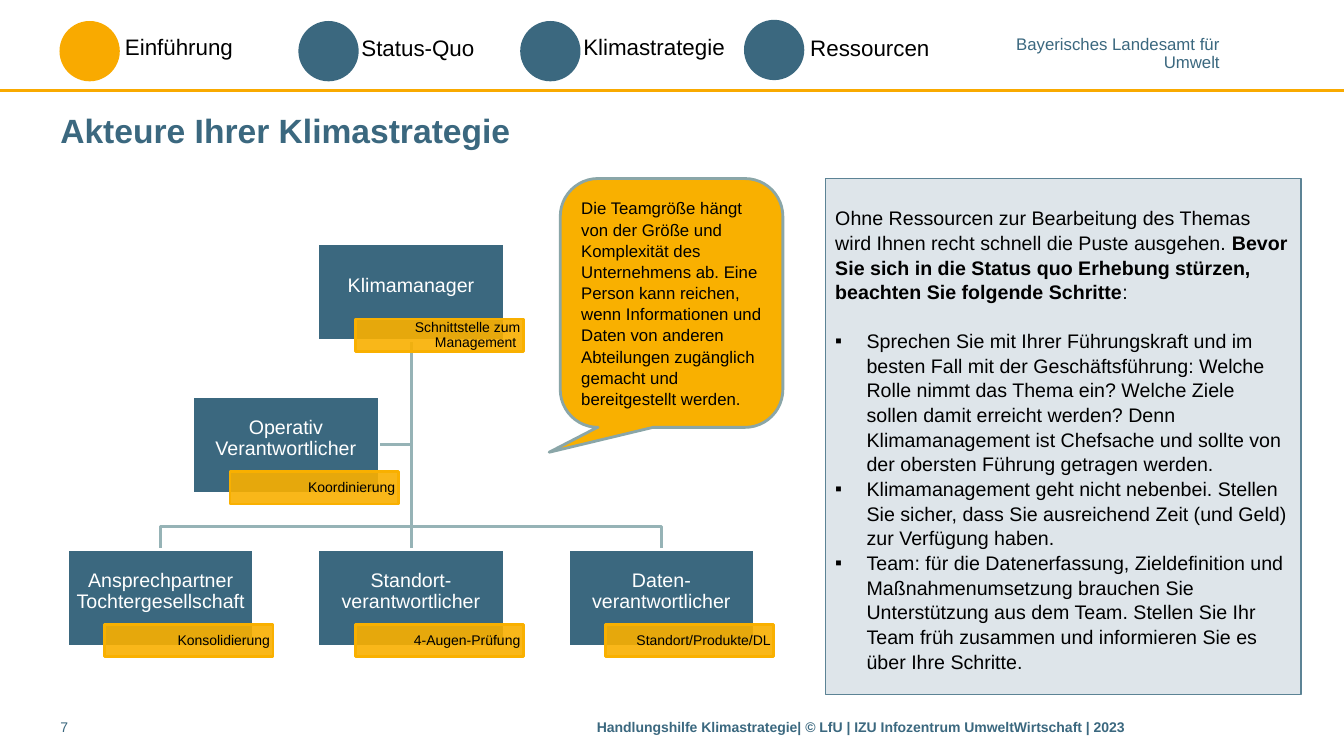
from lxml import etree
from pptx import Presentation
from pptx.dml.color import RGBColor
from pptx.enum import shapes, text
from pptx.oxml import ns
from pptx.util import Cm, Pt

BLUE, ORANGE, AMBER, GREY_GREEN = "3B687F", "F9AA00", "F9B000", "96B3B6"
LEFT, CENTER, RIGHT = text.PP_ALIGN.LEFT, text.PP_ALIGN.CENTER, text.PP_ALIGN.RIGHT
TOP, MIDDLE = text.MSO_ANCHOR.TOP, text.MSO_ANCHOR.MIDDLE


def paint(fill, color):
    fill.solid()
    fill.fore_color.rgb = RGBColor.from_string(color)


def write(shape, paragraphs, size, color="000000", align=LEFT, spacing=1.0, bold=False, **frame_format):
    """Each paragraph is a list of text pieces; every second piece is set bold."""
    frame = shape.text_frame
    for name, value in {"word_wrap": True, "vertical_anchor": TOP, **frame_format}.items():
        setattr(frame, name, value)
    for number, pieces in enumerate(paragraphs):
        paragraph = frame.add_paragraph() if number else frame.paragraphs[0]
        paragraph.alignment = align
        paragraph.line_spacing = spacing
        for position, piece in enumerate(pieces):
            run = paragraph.add_run()
            run.text = piece
            font_format = {"name": "Arial", "size": Pt(size), "bold": bold or position % 2 == 1}
            for name, value in font_format.items():
                setattr(run.font, name, value)
            paint(run.font.fill, color)


prs = Presentation()
prs.slide_width, prs.slide_height = Cm(33.87), Cm(19.05)
slide = prs.slides.add_slide(prs.slide_layouts[6])
items = slide.shapes

# Straight lines: header rule, then the trunk of the chart
for x1, y1, x2, y2, color in [
    (0, 2.29, 33.87, 2.29, ORANGE),
    (10.36, 8.59, 10.36, 13.85, GREY_GREEN),
]:
    rule = items.add_connector(shapes.MSO_CONNECTOR.STRAIGHT, Cm(x1), Cm(y1), Cm(x2), Cm(y2))
    paint(rule.line.fill, color)
    rule.line.width = Pt(2)
    etree.SubElement(rule._element.spPr, ns.qn("a:effectLst"))

# Header: chapters, the current one in orange
for chapter, dot_x, dot_y, name_x, name_y, width, color in [
    ("Einführung", 1.5, 0.53, 2.9, 0.71, 3.45, ORANGE),
    ("Status-Quo", 7.52, 0.53, 8.86, 0.74, 3.45, BLUE),
    ("Klimastrategie", 13.11, 0.53, 14.45, 0.71, 7.49, BLUE),
    ("Ressourcen", 18.75, 0.5, 20.17, 0.74, 7.49, BLUE),
]:
    dot = items.add_shape(shapes.MSO_SHAPE.OVAL, Cm(dot_x), Cm(dot_y), Cm(1.52), Cm(1.52))
    dot.shadow.inherit = False
    paint(dot.fill, color)
    dot.line.fill.background()
    write(items.add_textbox(Cm(name_x), Cm(name_y), Cm(width), Cm(0.94)), [[chapter]], 16)

# Agency name, title, footer and page number
agency = items.add_textbox(Cm(25.58), Cm(0.94), Cm(5.16), Cm(0.86))
write(agency, [["Bayerisches Landesamt für"], ["Umwelt"]], 12, BLUE, RIGHT, 0.85, word_wrap=False,
      margin_left=0, margin_right=0, margin_top=0, margin_bottom=0)
for line, x, y, width, height, size, bold, anchor in [
    ("Akteure Ihrer Klimastrategie", 1.52, 2.59, 31.27, 1.4, 24, True, MIDDLE),
    ("Handlungshilfe Klimastrategie| © LfU | IZU Infozentrum UmweltWirtschaft | 2023",
     15.04, 17.98, 17.75, 0.79, 10, True, TOP),
    ("7", 1.52, 17.98, 1.78, 0.79, 10, False, TOP),
]:
    write(items.add_textbox(Cm(x), Cm(y), Cm(width), Cm(height)), [[line]], size, BLUE, bold=bold,
          vertical_anchor=anchor, margin_left=0, margin_right=0)

# Panel with the steps to take
panel = items.add_shape(shapes.MSO_SHAPE.RECTANGLE, Cm(20.8), Cm(4.5), Cm(11.99), Cm(13))
panel.shadow.inherit = False
paint(panel.fill, "DEE5EA")
paint(panel.line.fill, "5C8395")
panel.line.width = Pt(1)
write(panel, [
    ["Ohne Ressourcen zur Bearbeitung des Themas wird Ihnen recht schnell die Puste ausgehen. ",
     "Bevor Sie sich in die Status quo Erhebung stürzen, beachten Sie folgende Schritte", ":"],
    ["Sprechen Sie mit Ihrer Führungskraft und im besten Fall mit der Geschäftsführung: Welche "
     "Rolle nimmt das Thema ein? Welche Ziele sollen damit erreicht werden? Denn Klimamanagement "
     "ist Chefsache und sollte von der obersten Führung getragen werden."],
    ["Klimamanagement geht nicht nebenbei. Stellen Sie sicher, dass Sie ausreichend Zeit (und "
     "Geld) zur Verfügung haben."],
    ["Team: für die Datenerfassung, Zieldefinition und Maßnahmenumsetzung brauchen Sie "
     "Unterstützung aus dem Team. Stellen Sie Ihr Team früh zusammen und informieren Sie es "
     "über Ihre Schritte."],
], 14, spacing=1.05, margin_top=Cm(0.67))
steps = panel.text_frame.paragraphs[1:]
steps[0].space_before = Pt(17)
for step in steps:
    properties = step._p.get_or_add_pPr()
    properties.set("marL", str(Cm(0.79)))
    properties.set("indent", str(-Cm(0.79)))
    etree.SubElement(properties, ns.qn("a:buFont"), typeface="Arial")
    etree.SubElement(properties, ns.qn("a:buChar"), char="▪")

# Branches from the manager to the side role and the outer roles
for branch in [
    [(10.36, 8.59), (10.36, 11.2), (9.55, 11.2)],
    [(10.36, 8.59), (10.36, 13.26), (16.67, 13.26), (16.67, 13.85)],
    [(10.36, 8.59), (10.36, 13.26), (4.05, 13.26), (4.05, 13.85)],
]:
    start, *corners = [(Cm(x), Cm(y)) for x, y in branch]
    builder = items.build_freeform(*start)
    builder.add_line_segments(corners, close=False)
    elbow = builder.convert_to_shape()
    elbow.shadow.inherit = False
    elbow.fill.background()
    paint(elbow.line.fill, GREY_GREEN)
    elbow.line.width = Pt(2)

# Roles with their tasks, placed by column and row
for role, task, column, row in [
    ("Klimamanager", "Schnittstelle zum Management ", 1, 0),
    ("Ansprechpartner Tochtergesellschaft", "Konsolidierung", 0, 2),
    ("Standort-verantwortlicher", "4-Augen-Prüfung", 1, 2),
    ("Daten-verantwortlicher", "Standort/Produkte/DL", 2, 2),
    ("Operativ Verantwortlicher", "Koordinierung", 0.5, 1),
]:
    x, y = 1.7 + 6.31 * column, 6.15 + 3.85 * row
    for words, dx, dy, width, height, fill, edge, size, color, align, side, bottom in [
        (role, 0, 0, 4.7, 2.44, BLUE, "FFFFFF", 14, "FFFFFF", CENTER, 0.03, 0.36),
        (task, 0.94, 1.89, 4.24, 0.81, AMBER, AMBER, 10, "000000", RIGHT, 0.08, 0.03),
    ]:
        box = items.add_shape(shapes.MSO_SHAPE.RECTANGLE, Cm(x + dx), Cm(y + dy), Cm(width), Cm(height))
        box.shadow.inherit = False
        paint(box.fill, fill)
        paint(box.line.fill, edge)
        box.line.width = Pt(2)
        write(box, [[words]], size, color, align, 0.9, vertical_anchor=MIDDLE, margin_left=Cm(side),
              margin_right=Cm(side), margin_top=Cm(0.03), margin_bottom=Cm(bottom))
    # The task box, drawn last, is slightly transparent
    tint = box._element.spPr.find(ns.qn("a:solidFill"))[0]
    etree.SubElement(tint, ns.qn("a:alpha"), val="90000")

# Callout on team size
callout = items.add_shape(shapes.MSO_SHAPE.ROUNDED_RECTANGULAR_CALLOUT, Cm(14.12), Cm(4.5), Cm(5.61), Cm(6.27))
for number, value in enumerate([-0.55, 0.6, 0.17]):
    callout.adjustments[number] = value
callout.shadow.inherit = False
paint(callout.fill, AMBER)
paint(callout.line.fill, "8AA6A8")
callout.line.width = Pt(2)
write(callout, [[
    "Die Teamgröße hängt von der Größe und Komplexität des Unternehmens ab. Eine Person kann "
    "reichen, wenn Informationen und Daten von anderen Abteilungen zugänglich gemacht und "
    "bereitgestellt werden."
]], 12, spacing=1.05, vertical_anchor=MIDDLE)

prs.save("out.pptx")
